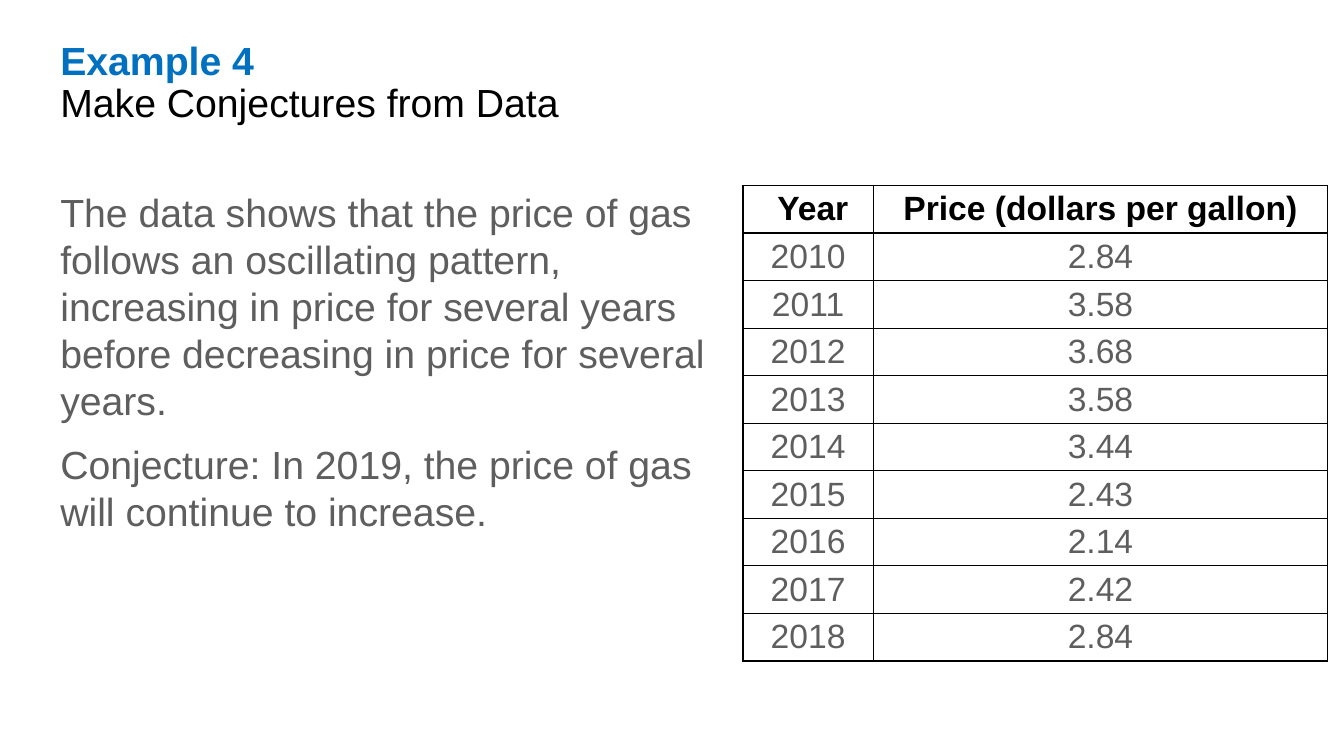
from lxml.etree import SubElement
from pptx import Presentation
from pptx.dml.color import RGBColor
from pptx.enum.text import MSO_ANCHOR, PP_ALIGN
from pptx.oxml.ns import qn
from pptx.util import Inches, Pt

PRICES = {
    "2010": "2.84", "2011": "3.58", "2012": "3.68",
    "2013": "3.58", "2014": "3.44", "2015": "2.43",
    "2016": "2.14", "2017": "2.42", "2018": "2.84",
}


def color(value):
    return RGBColor.from_string(value)


class SlideBuilder:
    font_name = "Arial"
    black, blue, gray = "000000", "0070C0", "5E5E5E"

    def __init__(self, slide):
        self.slide = slide

    def add_run(self, paragraph, text, size, fill, bold=False):
        run = paragraph.add_run()
        run.text = text
        run.font.name = self.font_name
        run.font.size = Pt(size)
        run.font.bold = bold
        run.font.color.rgb = color(fill)

    def add_text_box(self, left, top, width, height):
        shape = self.slide.shapes.add_textbox(
            Inches(left), Inches(top), Inches(width), Inches(height))
        shape.text_frame.word_wrap = True
        return shape.text_frame

    def add_title(self, label, title):
        paragraph = self.add_text_box(0.5, 0.36, 7.6, 1.41).paragraphs[0]
        paragraph.line_spacing = 0.9
        self.add_run(paragraph, label, 28, self.blue, bold=True)
        paragraph.add_line_break()
        self.add_run(paragraph, title, 28, self.black)

    def add_body(self, texts):
        frame = self.add_text_box(0.5, 1.82, 6.7, 4.42)
        for index, text in enumerate(texts):
            paragraph = frame.add_paragraph() if index else frame.paragraphs[0]
            if index:
                paragraph.space_before = Pt(12)
            self.add_run(paragraph, text, 28, self.gray)

    def add_borders(self, cell):
        properties = cell._tc.get_or_add_tcPr()
        for position, side in enumerate(("lnL", "lnR", "lnT", "lnB")):
            line = properties.makeelement(qn(f"a:{side}"), {"w": str(Pt(1))})
            fill = SubElement(line, qn("a:solidFill"))
            SubElement(fill, qn("a:srgbClr"), val=self.black)
            properties.insert(position, line)

    def add_price_table(self, header, prices):
        rows = [header, *prices.items()]
        widths, height = (1.29, 4.51), 4.72
        table = self.slide.shapes.add_table(
            len(rows), len(widths), Inches(7.37), Inches(1.84),
            Inches(sum(widths)), Inches(height)).table
        table.horz_banding = False
        for column, width in zip(table.columns, widths):
            column.width = Inches(width)
        for row_index, values in enumerate(rows):
            is_header = row_index == 0
            for column_index, value in enumerate(values):
                cell = table.cell(row_index, column_index)
                cell.fill.background()
                cell.vertical_anchor = MSO_ANCHOR.MIDDLE
                cell.margin_top = cell.margin_bottom = Inches(0.03)
                self.add_borders(cell)
                paragraph = cell.text_frame.paragraphs[0]
                paragraph.alignment = PP_ALIGN.CENTER
                if is_header and column_index == 0:
                    self.add_run(paragraph, " ", 24, self.black)
                self.add_run(paragraph, value, 24,
                             self.black if is_header else self.gray, is_header)


def main():
    presentation = Presentation()
    presentation.slide_width = Inches(13.33)
    presentation.slide_height = Inches(7.5)
    slide = presentation.slides.add_slide(presentation.slide_layouts[6])
    builder = SlideBuilder(slide)
    builder.add_title("Example 4", "Make Conjectures from Data")
    builder.add_body((
        "The data shows that the price of gas follows an oscillating pattern, "
        "increasing in price for several years before decreasing in price for "
        "several years.",
        "Conjecture: In 2019, the price of gas will continue to increase.",
    ))
    builder.add_price_table(("Year", "Price (dollars per gallon)"), PRICES)
    presentation.save("out.pptx")


if __name__ == "__main__":
    main()
